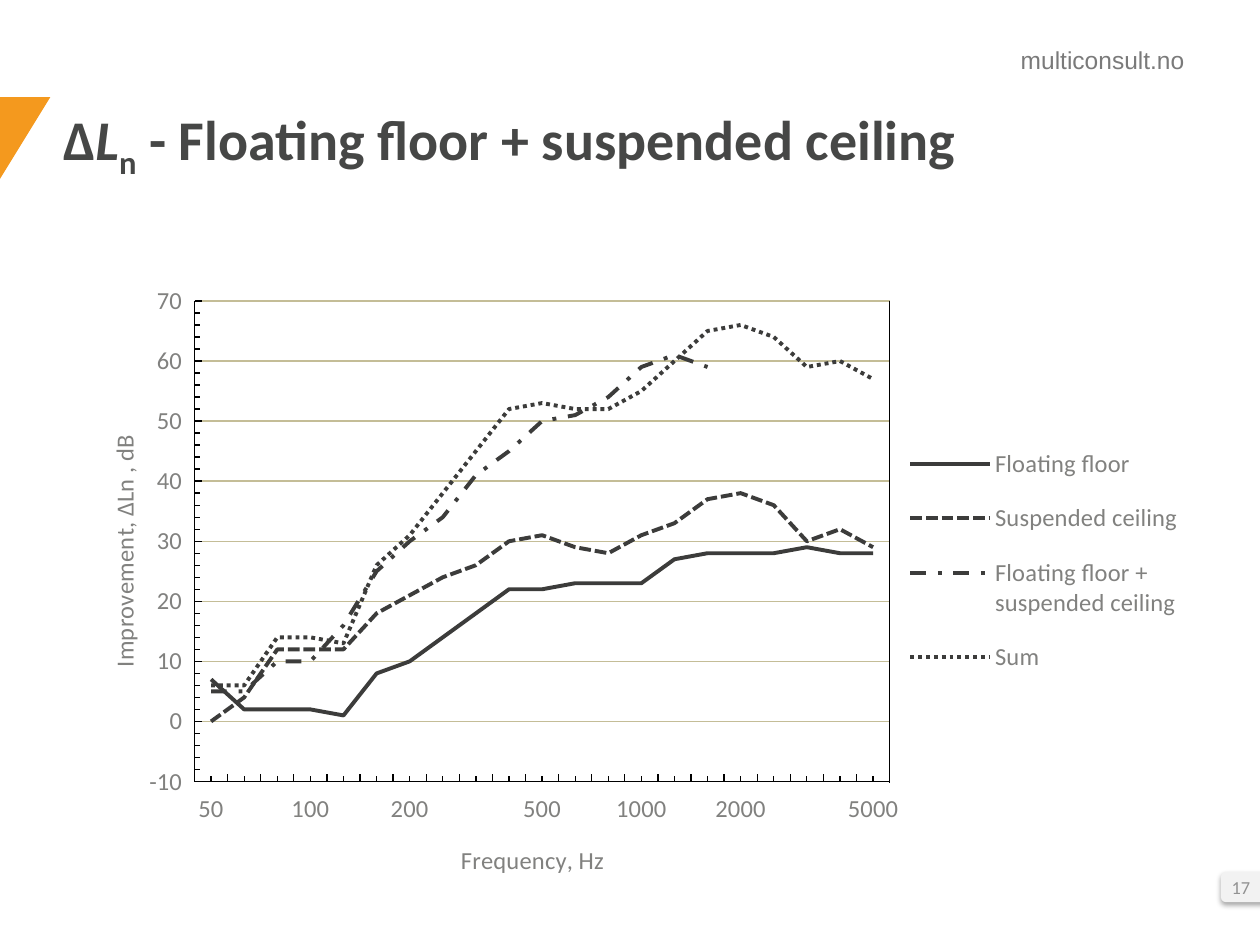
from lxml import etree
from pptx import Presentation, util as u
from pptx.chart.data import CategoryChartData
from pptx.dml.color import RGBColor
from pptx.enum import chart as ch, dml, shapes, text
from pptx.oxml import parse_xml
from pptx.oxml.ns import nsdecls, qn

THEME = dict(
    title="464746", site="7A7A7A", number="929292", accent="F4991E", tab="F2F2F2",
    ink="3C3C3B", label="81817F", axis="000000", grid="C4BD97", paper="FFFFFF",
    body="Calibri", web="Arial", title_size=32, chart_size=14, number_size=10.5,
)
TITLE = [("Δ", {}), ("L", {"i": "1"}), ("n", {"baseline": "-25000"}),
         (" - Floating floor + suspended ceiling", {})]
SITE, PAGE = "multiconsult.no", "17"
X_TITLE, Y_TITLE = "Frequency, Hz", " Improvement, ΔLn , dB"
BANDS = 21
BAND_LABELS = {0: "50", 3: "100", 6: "200", 10: "500", 13: "1000", 16: "2000", 20: "5000"}
DASH = dml.MSO_LINE_DASH_STYLE
CURVES = [
    ("Floating floor", DASH.SOLID,
     (7, 2, 2, 2, 1, 8, 10, 14, 18, 22, 22, 23, 23, 23, 27, 28, 28, 28, 29, 28, 28)),
    ("Suspended ceiling", DASH.SQUARE_DOT,
     (0, 4, 12, 12, 12, 18, 21, 24, 26, 30, 31, 29, 28, 31, 33, 37, 38, 36, 30, 32, 29)),
    ("Floating floor + suspended ceiling", DASH.DASH_DOT,
     (5, 5, 10, 10, 16, 25, 30, 34, 41, 45, 50, 51, 54, 59, 61, 59) + (None,) * 5),
    ("Sum", DASH.ROUND_DOT,
     (6, 6, 14, 14, 13, 26, 31, 38, 45, 52, 53, 52, 52, 55, 60, 65, 66, 64, 59, 60, 57)),
]
CHART = (0.5, 2.1, 9, 4.91)
# Shares of the chart's size: left, top, width, height
PLOT = (0.116, 0.059, 0.613, 0.779)
LEGEND = (0.74, 0.26, 0.25, 0.44)
X_TITLE_AT, Y_TITLE_AT = (0.347, 0.93), (0.035, 0.27)


def color(name):
    return RGBColor.from_string(THEME[name])


def inches(*lengths):
    return [u.Inches(length) for length in lengths]


def style(font, size, ink, face="body", bold=False):
    font.name, font.size, font.bold = THEME[face], u.Pt(size), bold
    font.color.rgb = color(ink)


def add_label(slide, box, words, size, ink, face, anchor):
    frame = slide.shapes.add_textbox(*inches(*box)).text_frame
    frame.word_wrap, frame.vertical_anchor = True, anchor
    paragraph = frame.paragraphs[0]
    paragraph.alignment = text.PP_ALIGN.RIGHT
    run = paragraph.add_run()
    run.text = words
    style(run.font, size, ink, face)


def fill_plain(shape, ink):
    shape.shadow.inherit = False
    shape.fill.solid()
    shape.fill.fore_color.rgb = color(ink)
    shape.line.fill.background()


def place(element, shares, before, inner=False):
    """Give a chart part a manual layout, put ahead of the first child named in before."""
    for old in element.findall(qn("c:layout")):
        element.remove(old)
    parts = '<c:layoutTarget val="inner"/>' if inner else ""
    parts += "".join(f'<c:{axis}Mode val="edge"/>' for axis in "xy")
    parts += "".join(f'<c:{key} val="{share}"/>' for key, share in zip("xywh", shares))
    layout = parse_xml(f'<c:layout {nsdecls("c")}><c:manualLayout>{parts}'
                       '</c:manualLayout></c:layout>')
    follower = next((child for child in element if child.tag in map(qn, before)), None)
    if follower is None:
        element.append(layout)
    else:
        follower.addprevious(layout)


def style_axis(axis, title, title_at):
    style(axis.tick_labels.font, THEME["chart_size"], "label")
    axis.format.line.color.rgb = color("axis")
    axis.format.line.width = u.Pt(0.75)
    axis.major_tick_mark = axis.minor_tick_mark = ch.XL_TICK_MARK.INSIDE
    axis.tick_label_position = ch.XL_TICK_LABEL_POSITION.LOW
    run = axis.axis_title.text_frame.paragraphs[0].add_run()
    run.text = title
    style(run.font, THEME["chart_size"], "label")
    place(axis.axis_title._element, title_at, ("c:overlay", "c:spPr", "c:txPr"))


def add_curves(slide):
    data = CategoryChartData(number_format="0")
    data.categories = [BAND_LABELS.get(band, "") for band in range(BANDS)]
    for name, _, values in CURVES:
        data.add_series(name, values)
    chart = slide.shapes.add_chart(ch.XL_CHART_TYPE.LINE, *inches(*CHART), data).chart
    style(chart.font, THEME["chart_size"], "ink")
    chart.has_title = False
    plot = chart.plots[0]
    plot.vary_by_categories = False
    for curve, (_, dash, _) in zip(plot.series, CURVES):
        curve.smooth = False
        curve.marker.style = ch.XL_MARKER_STYLE.NONE
        line = curve.format.line
        line.color.rgb, line.width, line.dash_style = color("ink"), u.Pt(2.25), dash

    bands, levels = chart.category_axis, chart.value_axis
    style_axis(bands, X_TITLE, X_TITLE_AT)
    style_axis(levels, Y_TITLE, Y_TITLE_AT)
    skip = etree.Element(qn("c:tickLblSkip"), val="1")
    bands._element.find(qn("c:noMultiLvlLbl")).addprevious(skip)
    levels.minimum_scale, levels.maximum_scale = -10, 70
    levels.major_unit, levels.minor_unit = 10, 2
    levels.crosses = ch.XL_AXIS_CROSSES.MINIMUM
    levels.tick_labels.number_format = "0"
    levels.tick_labels.number_format_is_linked = False
    grid = levels.major_gridlines.format.line
    grid.color.rgb, grid.width = color("grid"), u.Pt(0.75)

    chart.has_legend = True
    chart.legend.position = ch.XL_LEGEND_POSITION.BOTTOM
    chart.legend.include_in_layout = False
    style(chart.legend.font, THEME["chart_size"], "label")
    place(chart.legend._element, LEGEND, ("c:overlay", "c:spPr", "c:txPr"))
    place(chart._chartSpace.chart.plotArea, PLOT, ("c:lineChart",), inner=True)


def add_right_edge(slide):
    left, top, width, height = CHART
    x = left + width * (PLOT[0] + PLOT[2])
    y = top + height * PLOT[1]
    edge = slide.shapes.add_connector(shapes.MSO_CONNECTOR.STRAIGHT,
                                      *inches(x, y, x, y + height * PLOT[3]))
    edge.line.color.rgb, edge.line.width = color("axis"), u.Pt(0.75)
    etree.SubElement(edge._element.spPr, qn("a:effectLst"))


def add_title(slide):
    title = slide.shapes.title
    title.left, title.top, title.width, title.height = inches(0.5, 0.84, 9, 0.99)
    frame = title.text_frame
    frame.margin_left = frame.margin_top = frame.margin_right = 0
    frame.vertical_anchor, frame.word_wrap = text.MSO_ANCHOR.TOP, True
    frame.auto_size = text.MSO_AUTO_SIZE.NONE
    paragraph = frame.paragraphs[0]
    paragraph.alignment, paragraph.line_spacing = text.PP_ALIGN.LEFT, 0.9
    for words, marks in TITLE:
        run = paragraph.add_run()
        run.text = words
        style(run.font, THEME["title_size"], "title", bold=True)
        for key, value in marks.items():
            run.font._element.set(key, value)


def add_page_tab(slide):
    tab = slide.shapes.add_shape(shapes.MSO_SHAPE.ROUNDED_RECTANGLE,
                                 *inches(9.69, 6.92, 0.5, 0.24))
    fill_plain(tab, "tab")
    tab._element.spPr.find(qn("a:effectLst")).append(parse_xml(
        f'<a:outerShdw {nsdecls("a")} blurRad="{u.Pt(3.1)}" dist="{u.Pt(1.8)}" dir="5400000">'
        '<a:srgbClr val="000000"><a:alpha val="35000"/></a:srgbClr></a:outerShdw>'))
    add_label(slide, (9.53, 6.84, 0.49, 0.4), PAGE, THEME["number_size"], "number", "body",
              text.MSO_ANCHOR.MIDDLE)


def main():
    deck = Presentation()
    deck.slide_width, deck.slide_height = inches(10, 7.5)
    slide = deck.slides.add_slide(deck.slide_layouts[5])
    slide.background.fill.solid()
    slide.background.fill.fore_color.rgb = color("paper")
    add_label(slide, (6.83, 0.31, 2.67, 0.34), SITE, THEME["chart_size"], "site", "web",
              text.MSO_ANCHOR.TOP)
    corner = slide.shapes.build_freeform(*inches(0, 0.77), scale=1.0)
    corner.add_line_segments([inches(0, 1.42), inches(0.4, 0.77)], close=True)
    fill_plain(corner.convert_to_shape(), "accent")
    add_page_tab(slide)
    add_title(slide)
    add_curves(slide)
    add_right_edge(slide)
    deck.save("out.pptx")


if __name__ == "__main__":
    main()
